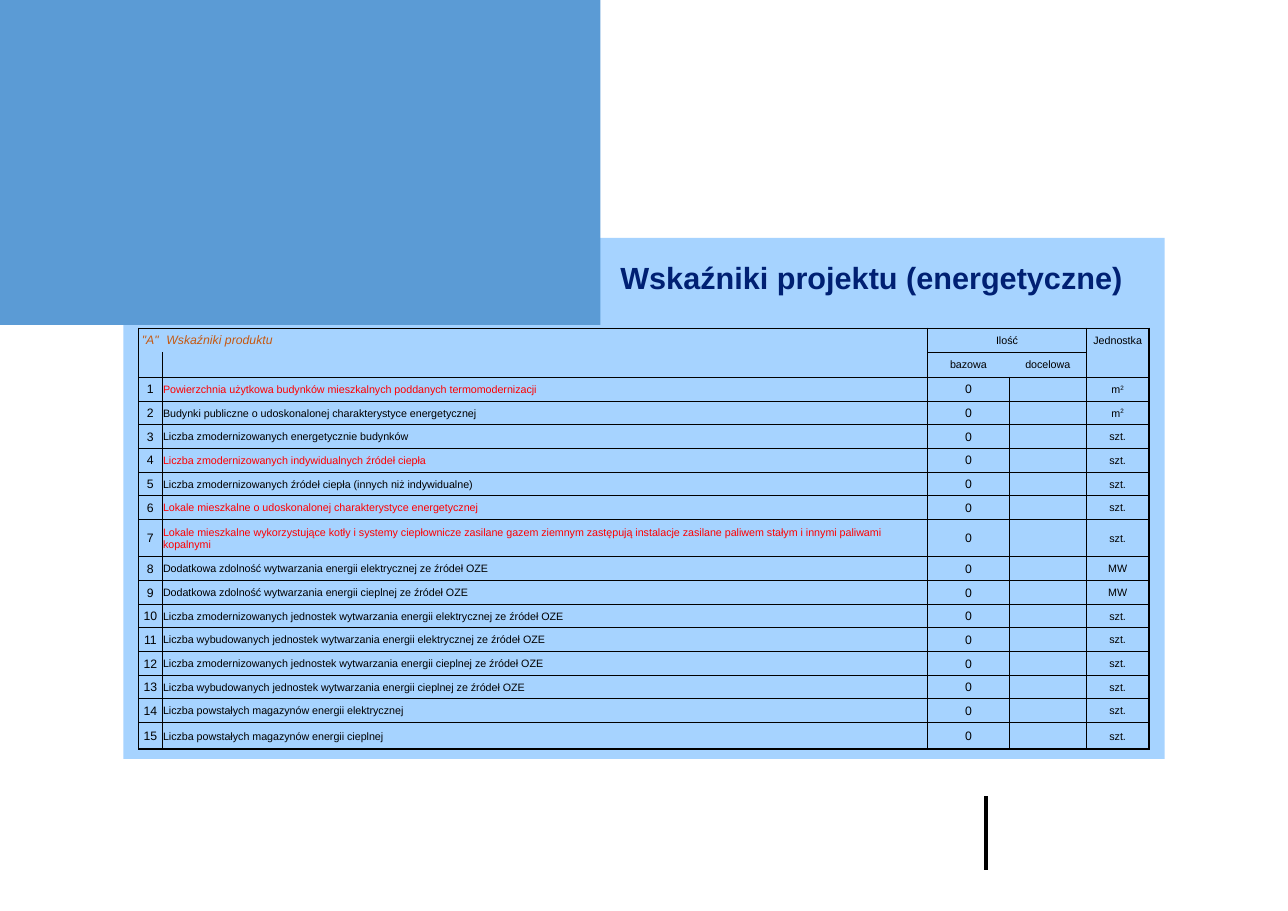
from dataclasses import dataclass

from lxml.etree import SubElement
from pptx import Presentation
from pptx.dml.color import RGBColor
from pptx.enum.shapes import MSO_CONNECTOR, MSO_SHAPE
from pptx.enum.text import MSO_ANCHOR, MSO_AUTO_SIZE, PP_ALIGN
from pptx.oxml.ns import qn
from pptx.slide import Slide
from pptx.table import Table, _Cell
from pptx.text.text import TextFrame
from pptx.util import Inches, Pt

BLACK = RGBColor(0x00, 0x00, 0x00)
RED = RGBColor(0xFF, 0x00, 0x00)
ORANGE = RGBColor(0xC6, 0x59, 0x11)
NAVY = RGBColor(0x00, 0x20, 0x73)
BLUE = RGBColor(0x5B, 0x9B, 0xD5)
LIGHT_BLUE = RGBColor(0xA6, 0xD3, 0xFF)

FONT = "Arial"
THIN, THICK = 0.5, 1
COLUMN_WIDTHS = [0.21, 6.95, 0.74, 0.7, 0.57]
TABLE_HEIGHT = 3.82
HEADER_ROWS = 2
QUANTITY_COLUMNS = (2, 3)
OPEN_EDGES = {(0, 0, "R"), (0, 1, "L"), (1, 2, "R"), (1, 3, "L")}


@dataclass
class Panel:
    left: float
    top: float
    width: float
    height: float
    color: RGBColor


@dataclass
class Indicator:
    name: str
    unit: str = "szt."
    exponent: str = ""
    color: RGBColor = BLACK


PANELS = [
    Panel(1.12, 2.16, 9.45, 4.73, LIGHT_BLUE),
    Panel(0, 0, 5.45, 2.95, BLUE),
]

INDICATORS = [
    Indicator("Powierzchnia użytkowa budynków mieszkalnych poddanych termomodernizacji", "m", "2", RED),
    Indicator("Budynki publiczne o udoskonalonej charakterystyce energetycznej", "m", "2"),
    Indicator("Liczba zmodernizowanych energetycznie budynków"),
    Indicator("Liczba zmodernizowanych indywidualnych źródeł ciepła", color=RED),
    Indicator("Liczba zmodernizowanych źródeł ciepła (innych niż indywidualne)"),
    Indicator("Lokale mieszkalne o udoskonalonej charakterystyce energetycznej", color=RED),
    Indicator(
        "Lokale mieszkalne wykorzystujące kotły i systemy ciepłownicze zasilane gazem ziemnym "
        "zastępują instalacje zasilane paliwem stałym i innymi paliwami kopalnymi",
        color=RED,
    ),
    Indicator("Dodatkowa zdolność wytwarzania energii elektrycznej ze źródeł OZE", "MW"),
    Indicator("Dodatkowa zdolność wytwarzania energii cieplnej ze źródeł OZE", "MW"),
    Indicator("Liczba zmodernizowanych jednostek wytwarzania energii elektrycznej ze źródeł OZE"),
    Indicator("Liczba wybudowanych jednostek wytwarzania energii elektrycznej ze źródeł OZE"),
    Indicator("Liczba zmodernizowanych jednostek wytwarzania energii cieplnej ze źródeł OZE"),
    Indicator("Liczba wybudowanych jednostek wytwarzania energii cieplnej ze źródeł OZE"),
    Indicator("Liczba powstałych magazynów energii elektrycznej"),
    Indicator("Liczba powstałych magazynów energii cieplnej"),
]


def write_text(frame: TextFrame, text: str, *, size: float = 7, color: RGBColor = BLACK,
               bold: bool = False, italic: bool = False,
               align: PP_ALIGN = PP_ALIGN.CENTER, exponent: str = "") -> None:
    para = frame.paragraphs[0]
    para.alignment = align
    for part in filter(None, (text, exponent)):
        span = para.add_run()
        span.text = part
        span.font.name = FONT
        span.font.size = Pt(size)
        span.font.bold = bold
        span.font.italic = italic
        span.font.color.rgb = color
    if exponent:
        span._r.get_or_add_rPr().set("baseline", "30000")
    if not text:
        SubElement(para._p, qn("a:endParaRPr"), sz=str(size * 100))


def edge_width(row: int, column: int, side: str, last_row: int) -> float:
    last_column = len(COLUMN_WIDTHS) - 1
    outer = {"L": column == 0, "R": column == last_column, "T": row == 0, "B": row == last_row}
    if outer[side]:
        return THICK
    if (row, column, side) in OPEN_EDGES:
        return 0
    if column not in QUANTITY_COLUMNS:
        if (row, side) in ((0, "B"), (1, "T")):
            return 0
        if (row, side) in ((1, "B"), (2, "T")):
            return THICK
    return THIN


def format_cell(cell: _Cell, row: int, column: int, last_row: int) -> None:
    cell.margin_left = cell.margin_right = cell.margin_top = Inches(0.01)
    cell.margin_bottom = 0
    cell.vertical_anchor = MSO_ANCHOR.MIDDLE
    properties = cell._tc.get_or_add_tcPr()
    for side in "LRTB":
        width = edge_width(row, column, side, last_row)
        line = SubElement(properties, qn(f"a:ln{side}"), w=str(Pt(width)))
        if width:
            fill = SubElement(line, qn("a:solidFill"))
            SubElement(fill, qn("a:srgbClr"), val=str(BLACK))
        else:
            SubElement(line, qn("a:noFill"))
    cell.fill.background()


def set_sizes(table: Table) -> None:
    for column, width in zip(table.columns, COLUMN_WIDTHS):
        column.width = Inches(width)
    special = {1: 0.23, 8: 0.34, len(table.rows) - 1: 0.24}
    regular = (TABLE_HEIGHT - sum(special.values())) / (len(table.rows) - len(special))
    for index, row in enumerate(table.rows):
        row.height = Inches(special.get(index, regular))


def add_indicator_table(page: Slide) -> None:
    row_count = HEADER_ROWS + len(INDICATORS)
    table = page.shapes.add_table(
        row_count, len(COLUMN_WIDTHS), Inches(1.26), Inches(2.98),
        Inches(sum(COLUMN_WIDTHS)), Inches(TABLE_HEIGHT)).table
    table.first_row = table.horz_banding = False
    set_sizes(table)
    for row in range(row_count):
        for column in range(len(COLUMN_WIDTHS)):
            format_cell(table.cell(row, column), row, column, row_count - 1)
    table.cell(0, 2).merge(table.cell(0, 3))

    heading = {"size": 8, "color": ORANGE, "italic": True}
    write_text(table.cell(0, 0).text_frame, '"A"', **heading)
    table.cell(0, 1).margin_left = Inches(0.04)
    write_text(table.cell(0, 1).text_frame, "Wskaźniki produktu", align=PP_ALIGN.LEFT, **heading)
    for column, label in ((2, "Ilość"), (3, ""), (4, "Jednostka")):
        write_text(table.cell(0, column).text_frame, label)
    for column, label in enumerate(("", "", "bazowa", "docelowa", "")):
        write_text(table.cell(1, column).text_frame, label)

    for number, indicator in enumerate(INDICATORS, 1):
        frames = [cell.text_frame for cell in table.rows[number + HEADER_ROWS - 1].cells]
        write_text(frames[0], str(number), size=8)
        write_text(frames[1], indicator.name, color=indicator.color, align=PP_ALIGN.LEFT)
        write_text(frames[2], "0", size=8)
        write_text(frames[3], "")
        write_text(frames[4], indicator.unit, exponent=indicator.exponent)


def add_panel(page: Slide, panel: Panel) -> None:
    box = page.shapes.add_shape(
        MSO_SHAPE.RECTANGLE, Inches(panel.left), Inches(panel.top),
        Inches(panel.width), Inches(panel.height))
    box.shadow.inherit = False
    box.fill.solid()
    box.fill.fore_color.rgb = panel.color
    box.line.fill.background()


def add_footer_line(page: Slide) -> None:
    line = page.shapes.add_connector(
        MSO_CONNECTOR.STRAIGHT, Inches(8.95), Inches(7.23), Inches(8.95), Inches(7.9))
    line.line.color.rgb = BLACK
    line.line.width = Pt(3)
    SubElement(line.element.spPr, qn("a:effectLst"))


def place_title(page: Slide) -> None:
    title = page.shapes.title
    title.left, title.top = Inches(5.53), Inches(2.3)
    title.width, title.height = Inches(4.97), Inches(0.44)
    frame = title.text_frame
    frame.word_wrap = True
    frame.auto_size = MSO_AUTO_SIZE.NONE
    frame.vertical_anchor = MSO_ANCHOR.MIDDLE
    write_text(frame, "Wskaźniki projektu (energetyczne)", size=20, color=NAVY,
               bold=True, align=PP_ALIGN.LEFT)
    title.element.getparent().append(title.element)


def main() -> None:
    deck = Presentation()
    deck.slide_width, deck.slide_height = Inches(11.69), Inches(8.27)
    page = deck.slides.add_slide(deck.slide_layouts[5])
    for panel in PANELS:
        add_panel(page, panel)
    add_footer_line(page)
    add_indicator_table(page)
    place_title(page)
    deck.save("out.pptx")


if __name__ == "__main__":
    main()
